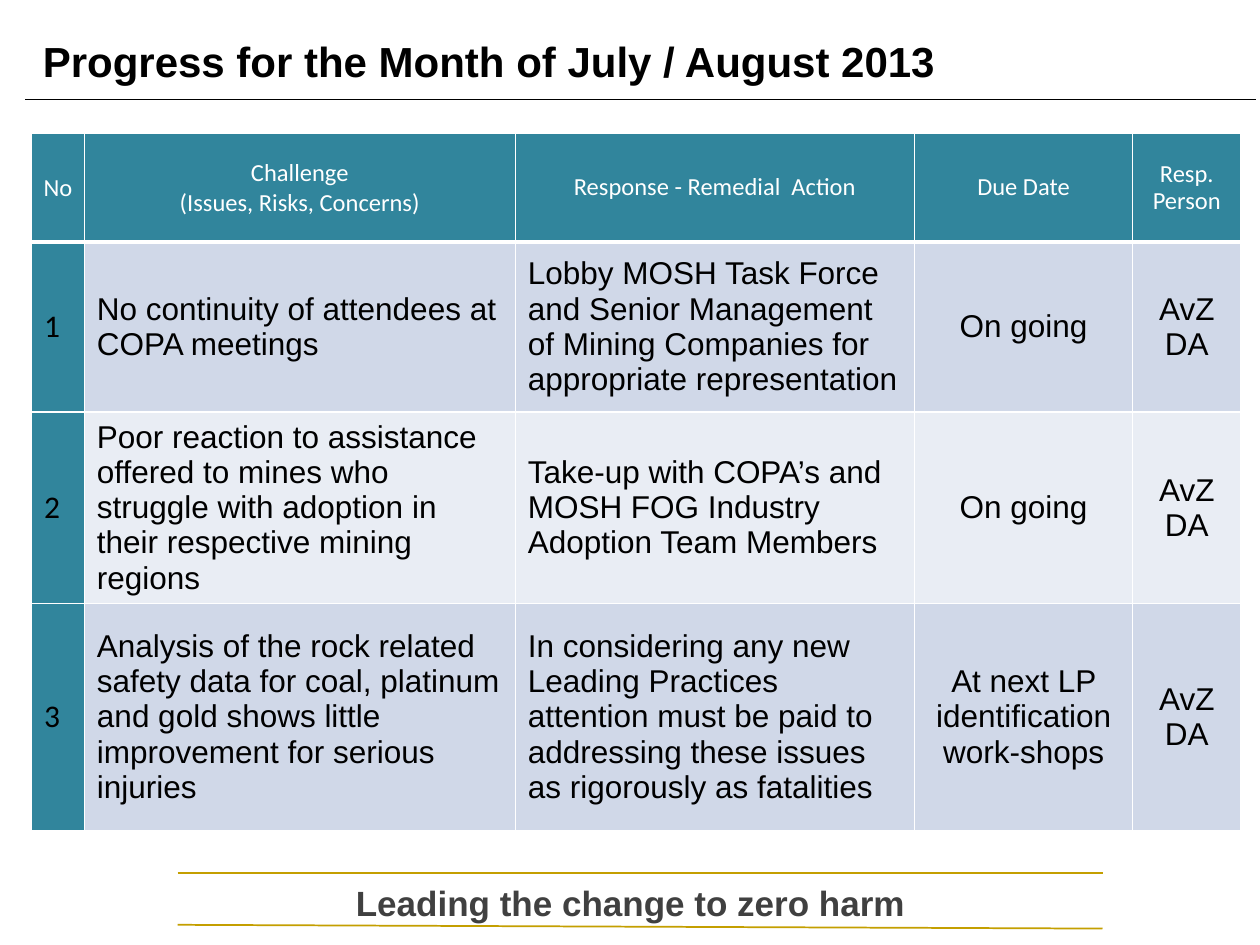
from lxml.etree import SubElement
from pptx import Presentation
from pptx.dml.color import RGBColor
from pptx.enum.shapes import MSO_CONNECTOR
from pptx.enum.text import MSO_ANCHOR as Anchor, PP_ALIGN as Align
from pptx.oxml.ns import qn
from pptx.util import Inches, Pt

BLACK = RGBColor(0x00, 0x00, 0x00)
WHITE = RGBColor(0xFF, 0xFF, 0xFF)
GRAY = RGBColor(0x40, 0x40, 0x40)
GOLD = RGBColor(0xC4, 0x9F, 0x00)
TEAL = RGBColor(0x31, 0x85, 0x9C)
BANDS = (RGBColor(0xD0, 0xD8, 0xE8), RGBColor(0xE9, 0xED, 0xF4))

COLUMN_WIDTHS = (0.42, 3.42, 3.17, 1.73, 0.86)
ROW_HEIGHTS = (0.86, 1.35, 1.52, 1.8)
HEADERS = (
    "No",
    "Challenge\n(Issues, Risks, Concerns)",
    "Response - Remedial  Action",
    "Due Date",
    "Resp. Person",
)
ROWS = (
    ("1", "No continuity of attendees at COPA meetings",
     "Lobby MOSH Task Force and Senior Management of Mining Companies "
     "for appropriate representation",
     "On going", "AvZ\nDA"),
    ("2", "Poor reaction to assistance offered to mines who struggle with "
     "adoption in their respective mining regions",
     "Take-up with COPA’s and MOSH FOG Industry Adoption Team Members",
     "On going", "AvZ\nDA"),
    ("3", "Analysis of the rock related safety data for coal, platinum and "
     "gold shows little improvement for serious injuries",
     "In considering any new Leading Practices attention must be paid to "
     "addressing these issues as rigorously as fatalities",
     "At next LP identification work-shops", "AvZ DA"),
)


def write_text(frame, text, font_name, size, color, align=Align.LEFT,
               bold=False, line_spacing=None):
    """Write each line of the text as a paragraph of one run."""
    for index, line in enumerate(text.split("\n")):
        paragraph = frame.add_paragraph() if index else frame.paragraphs[0]
        paragraph.alignment = align
        paragraph.line_spacing = line_spacing
        run = paragraph.add_run()
        run.text = line
        run.font.name = font_name
        run.font.size = Pt(size)
        run.font.bold = bold
        run.font.color.rgb = color


def add_line(slide, start, end, color, width):
    line = slide.shapes.add_connector(
        MSO_CONNECTOR.STRAIGHT, *map(Inches, start + end))
    line.line.color.rgb = color
    line.line.width = Pt(width)
    SubElement(line._element.spPr, qn("a:effectLst"))


def add_title(slide):
    title = slide.shapes.title
    title.left, title.top = Inches(0.24), Inches(0.17)
    title.width, title.height = Inches(9.84), Inches(0.63)
    title.text_frame.vertical_anchor = Anchor.MIDDLE
    write_text(title.text_frame, "Progress for the Month of July / August 2013",
               "Arial", 24, BLACK, bold=True)


def style_cell(cell, fill, bottom_width=1):
    """Set the fill, white borders and middle anchor of a cell."""
    cell.vertical_anchor = Anchor.MIDDLE
    properties = cell._tc.get_or_add_tcPr()
    for side, width in (("L", 1), ("R", 1), ("T", 1), ("B", bottom_width)):
        border = SubElement(properties, qn(f"a:ln{side}"), w=str(Pt(width)))
        solid = SubElement(border, qn("a:solidFill"))
        SubElement(solid, qn("a:srgbClr"), val=str(WHITE))
    cell.fill.solid()
    cell.fill.fore_color.rgb = fill


def fill_header(cell, text, line_spacing):
    style_cell(cell, TEAL, bottom_width=3)
    cell.margin_left = cell.margin_right = Inches(0.04)
    cell.margin_top = cell.margin_bottom = Inches(0.04)
    write_text(cell.text_frame, text, "Calibri", 14, WHITE, Align.CENTER,
               line_spacing=line_spacing)


def add_progress_table(slide):
    table = slide.shapes.add_table(
        len(ROW_HEIGHTS), len(COLUMN_WIDTHS), Inches(0.25), Inches(1.06),
        Inches(sum(COLUMN_WIDTHS)), Inches(sum(ROW_HEIGHTS))).table
    for column, width in zip(table.columns, COLUMN_WIDTHS):
        column.width = Inches(width)
    for row, height in zip(table.rows, ROW_HEIGHTS):
        row.height = Inches(height)

    for column, text in enumerate(HEADERS):
        fill_header(table.cell(0, column), text, 0.9 if column > 1 else None)
    for row, texts in enumerate(ROWS, start=1):
        for column, text in enumerate(texts):
            cell = table.cell(row, column)
            style_cell(cell, BANDS[(row - 1) % 2] if column else TEAL)
            write_text(cell.text_frame, text, "Arial" if column else "Calibri",
                       18, BLACK, Align.CENTER if column > 2 else Align.LEFT)


def add_slogan(slide):
    box = slide.shapes.add_textbox(
        Inches(1.41), Inches(6.95), Inches(7.19), Inches(0.39))
    box.text_frame.word_wrap = True
    write_text(box.text_frame, "Leading the change to zero harm",
               "Arial", 20, GRAY, Align.CENTER, bold=True)


def main():
    presentation = Presentation()
    presentation.slide_width = Inches(10)
    presentation.slide_height = Inches(7.5)
    slide = presentation.slides.add_slide(presentation.slide_layouts[5])
    add_line(slide, (1.41, 6.93), (8.75, 6.93), GOLD, 1)
    add_line(slide, (1.41, 7.34), (8.75, 7.37), GOLD, 1)
    add_line(slide, (0.2, 0.79), (9.97, 0.79), BLACK, 0.75)
    add_title(slide)
    add_progress_table(slide)
    add_slogan(slide)
    presentation.save("out.pptx")


if __name__ == "__main__":
    main()
